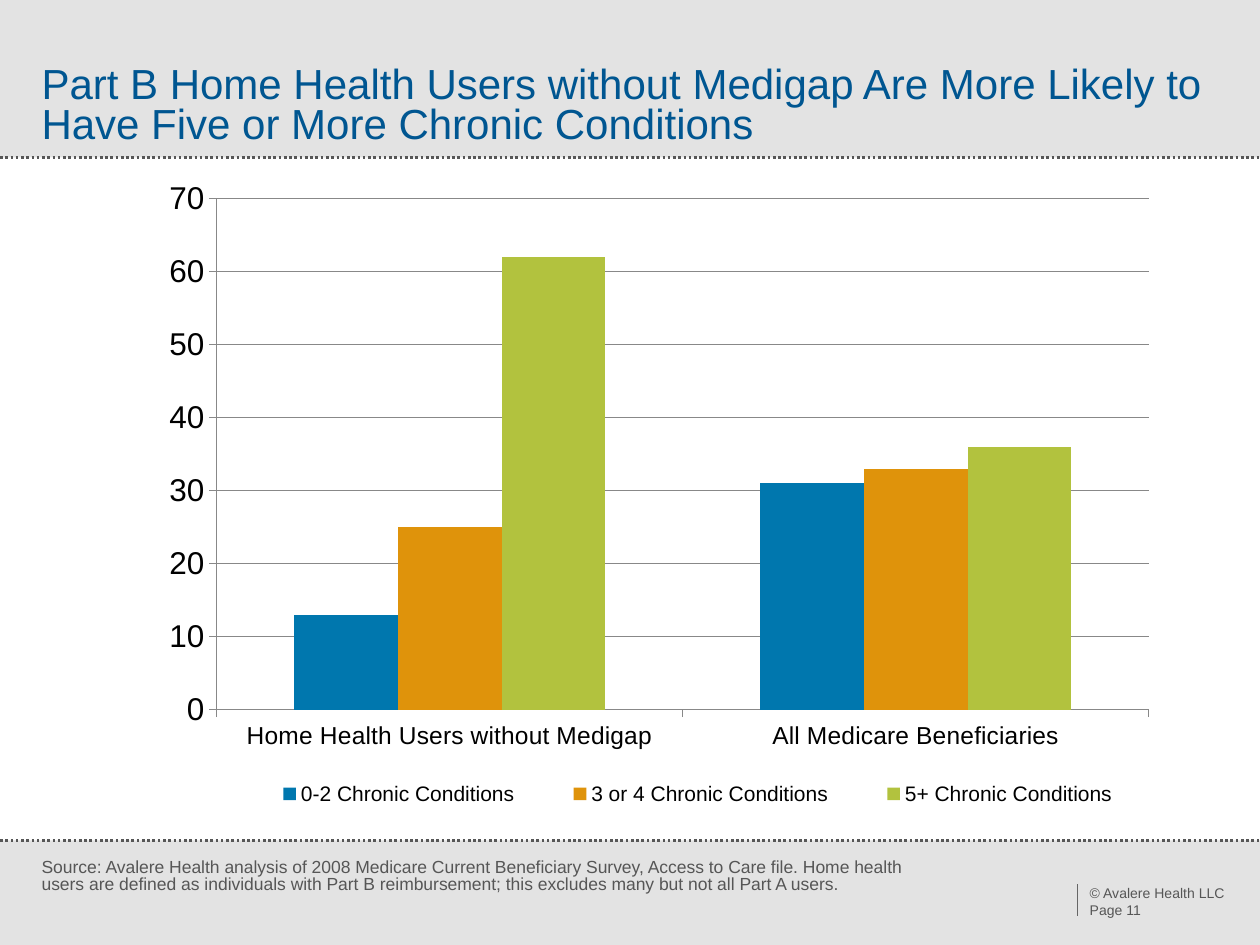
from lxml import etree
from pptx import Presentation
from pptx.chart.data import CategoryChartData
from pptx.dml.color import RGBColor
from pptx.enum.chart import XL_CHART_TYPE as ChartType, XL_LEGEND_POSITION as LegendPos
from pptx.enum.chart import XL_TICK_MARK as TickMark
from pptx.enum.dml import MSO_LINE
from pptx.enum.shapes import MSO_CONNECTOR as Connector, MSO_SHAPE as Shape
from pptx.oxml.ns import qn
from pptx.util import Inches, Pt

FONT = "Arial"
BAND, GRAY, RULE, AXIS = "E3E3E3", "565656", "666666", "888888"
BLUE, BLACK = "005691", "000000"
SLIDE_W, SLIDE_H = 10, 7.5
HEADER_H, FOOTER_TOP = 1.25, 6.67

CATEGORIES = ["Home Health Users without Medigap", "All Medicare Beneficiaries"]
SERIES = [
    ("0-2 Chronic Conditions", (13, 31), "0077AE"),
    ("3 or 4 Chronic Conditions", (25, 33), "DF930B"),
    ("5+ Chronic Conditions", (62, 36), "B2C23E"),
]


def color(hex_string):
    return RGBColor.from_string(hex_string)


def style_font(font, size, hex_string):
    font.name = FONT
    font.size = Pt(size)
    font.color.rgb = color(hex_string)


def add_text(slide, box, text, size, hex_string, margins=(0, 0, 0, 0), spacing=None):
    frame = slide.shapes.add_textbox(*map(Inches, box)).text_frame
    frame.word_wrap = True
    (frame.margin_left, frame.margin_top,
     frame.margin_right, frame.margin_bottom) = map(Inches, margins)
    frame.text = text
    paragraph = frame.paragraphs[0]
    if spacing:
        paragraph.line_spacing = spacing
    for run in paragraph.runs:
        style_font(run.font, size, hex_string)


def add_band(slide, box):
    band = slide.shapes.add_shape(Shape.RECTANGLE, *map(Inches, box))
    band.shadow.inherit = False
    band.fill.solid()
    band.fill.fore_color.rgb = color(BAND)
    band.line.fill.background()


def add_rule(slide, start, end, width, hex_string, dash=None):
    rule = slide.shapes.add_connector(Connector.STRAIGHT, *map(Inches, start + end))
    rule.line.width = Pt(width)
    rule.line.color.rgb = color(hex_string)
    if dash:
        rule.line.dash_style = dash
    etree.SubElement(rule._element.spPr, qn("a:effectLst"))


def set_layout(parent, index, box, target=None):
    """Fix a chart part at fractions of the chart's width and height."""
    for old in parent.findall(qn("c:layout")):
        parent.remove(old)
    layout = etree.Element(qn("c:layout"))
    manual = etree.SubElement(layout, qn("c:manualLayout"))
    settings = [("layoutTarget", target)] if target else []
    settings += [("xMode", "edge"), ("yMode", "edge"), *zip("xywh", box)]
    for tag, value in settings:
        etree.SubElement(manual, qn(f"c:{tag}")).set("val", str(value))
    parent.insert(index, layout)


def build_header(slide, box):
    left, top, width, height = box
    bottom = top + height
    add_band(slide, box)
    add_rule(slide, (left, bottom), (left + width, bottom), 1.5, GRAY, MSO_LINE.ROUND_DOT)
    add_text(slide, (left + 0.33, top + 0.53, width - 0.67, 0.65),
             "Part B Home Health Users without Medigap Are More Likely to "
             "Have Five or More Chronic Conditions",
             24, BLUE, margins=(0, 0, 0.1, 0), spacing=0.8)


def build_footer(slide, box):
    left, top, width, height = box
    add_band(slide, box)
    add_rule(slide, (left, top), (left + width, top), 1.5, GRAY, MSO_LINE.ROUND_DOT)
    add_text(slide, (left + 0.33, top + 0.16, 7.08, 0.27),
             "Source: Avalere Health analysis of 2008 Medicare Current Beneficiary "
             "Survey, Access to Care file. Home health users are defined as individuals "
             "with Part B reimbursement; this excludes many but not all Part A users.",
             10, GRAY, spacing=0.8)
    # Copyright and page number beside a thin vertical rule
    x, y = left + 8.55, top + 0.35
    add_rule(slide, (x, y), (x, y + 0.25), 0.5, RULE)
    add_text(slide, (x, y, 1.33, 0.32), "© Avalere Health LLC\vPage 11",
             8, GRAY, margins=(0.1, 0, 0.1, 0.05))


def build_chart(slide, box):
    data = CategoryChartData()
    data.categories = CATEGORIES
    for name, values, _ in SERIES:
        data.add_series(name, values)
    chart = slide.shapes.add_chart(
        ChartType.COLUMN_CLUSTERED, *map(Inches, box), data).chart
    chart.has_title = False
    style_font(chart.font, 18, BLACK)

    # Columns
    plot = chart.plots[0]
    plot.gap_width = 150
    plot.overlap = 0
    plot.vary_by_categories = False
    for series, (_, _, fill) in zip(plot.series, SERIES):
        series.format.fill.solid()
        series.format.fill.fore_color.rgb = color(fill)

    # Axes
    value_axis, category_axis = chart.value_axis, chart.category_axis
    value_axis.minimum_scale, value_axis.maximum_scale = 0, 70
    value_axis.major_unit = 10
    value_axis.has_major_gridlines = True
    gridlines = value_axis.major_gridlines.format.line
    gridlines.width = Pt(0.75)
    gridlines.color.rgb = color(AXIS)
    for axis, size in ((value_axis, 18), (category_axis, 14)):
        axis.major_tick_mark = TickMark.OUTSIDE
        axis.format.line.width = Pt(0.75)
        axis.format.line.color.rgb = color(AXIS)
        style_font(axis.tick_labels.font, size, BLACK)

    # Legend in a row below the plot
    chart.has_legend = True
    legend = chart.legend
    legend.position = LegendPos.BOTTOM
    legend.include_in_layout = False
    style_font(legend.font, 12, BLACK)
    set_layout(legend._element, 1, (0.17, 0.9, 0.77, 0.08))
    set_layout(plot._element.getparent(), 0, (0.158, 0.048, 0.769, 0.766), "inner")


def main():
    prs = Presentation()
    prs.slide_width, prs.slide_height = Inches(SLIDE_W), Inches(SLIDE_H)
    slide = prs.slides.add_slide(prs.slide_layouts[6])
    build_header(slide, (0, 0, SLIDE_W, HEADER_H))
    build_footer(slide, (0, FOOTER_TOP, SLIDE_W, SLIDE_H - FOOTER_TOP))
    build_chart(slide, (0.2, 1.32, 9.62, 5.3))
    prs.save("out.pptx")


if __name__ == "__main__":
    main()
